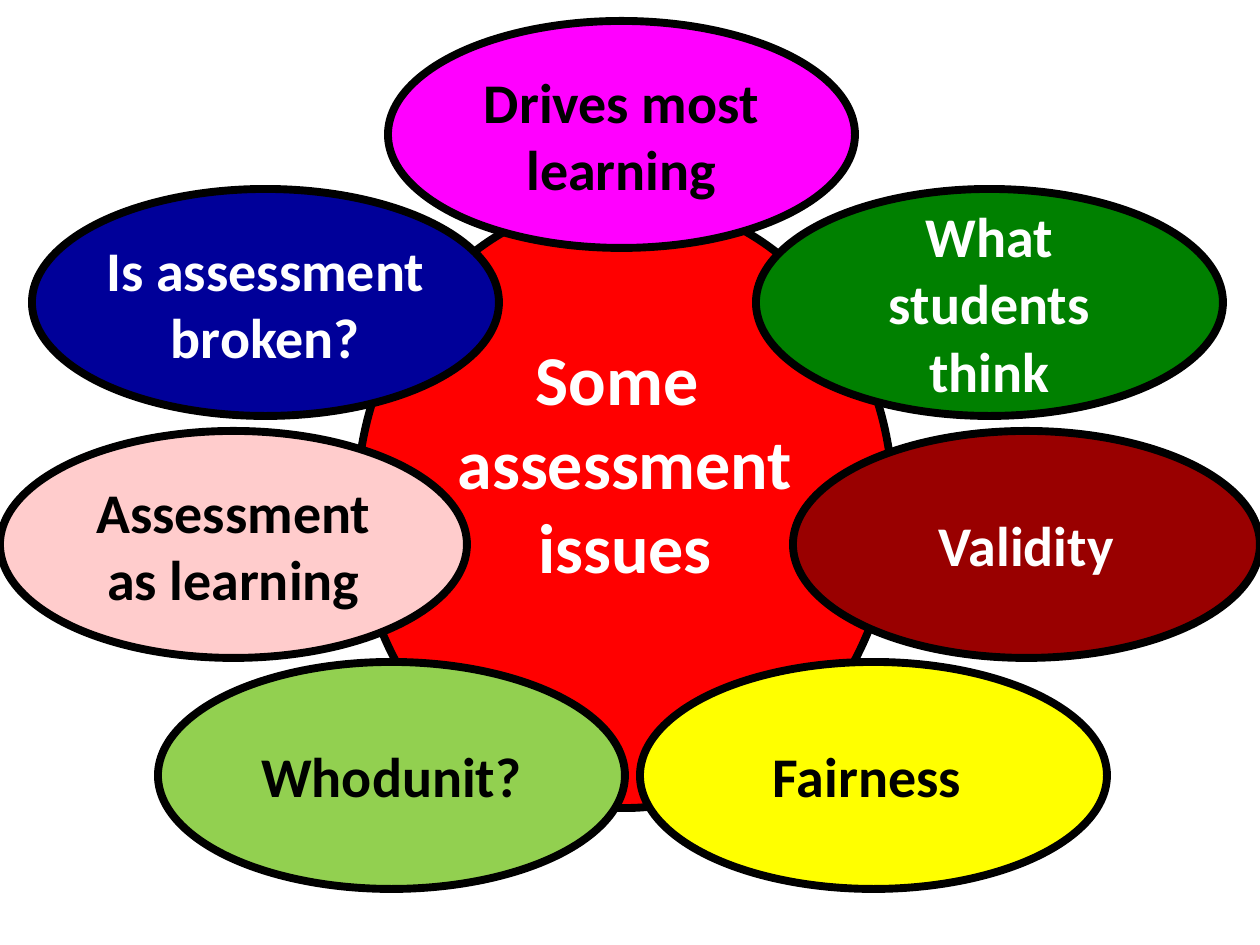
"""Build a slide of seven assessment issues set around a central ellipse."""
from pptx import Presentation
from pptx import util as u
from pptx.dml.color import RGBColor
from pptx.enum import shapes, text

PX = 914400 / 126
HUES = {
    "red": "FF0000", "maroon": "990000", "navy": "000099", "green": "008000",
    "pink": "FFCCCC", "magenta": "FF00FF", "lime": "92D050",
    "yellow": "FFFF00", "white": "FFFFFF", "black": "000000",
}


def px(n):
    return u.Emu(round(n * PX))


def oval(words, box, fill, ink, size=32, side=0, base=0):
    shape = slide.shapes.add_shape(shapes.MSO_SHAPE.OVAL, *map(px, box))
    shape.shadow.inherit = False
    shape.fill.solid()
    shape.fill.fore_color.rgb = RGBColor.from_string(HUES[fill])
    shape.line.color.rgb = RGBColor.from_string(HUES["black"])
    shape.line.width = u.Pt(4.5)
    frame = shape.text_frame
    frame.word_wrap = True
    frame.vertical_anchor = text.MSO_ANCHOR.MIDDLE
    frame.margin_left = frame.margin_right = px(side)
    frame.margin_top, frame.margin_bottom = 0, px(base)
    frame.text = words
    for para in frame.paragraphs:
        para.alignment = text.PP_ALIGN.CENTER
        font = para.runs[0].font
        font.name, font.size, font.bold = "Calibri", u.Pt(size), True
        font.color.rgb = RGBColor.from_string(HUES[ink])


deck = Presentation()
deck.slide_width, deck.slide_height = px(1260), px(945)
slide = deck.slides.add_slide(deck.slide_layouts[6])

oval("Some \nassessment\nissues", (357, 199, 536, 609), "red", "white",
     size=40, side=12, base=84)

WIDE, HIGH = 467, 227
issues = [
    ("Validity", 793, 431, "maroon", "white"),
    ("Is assessment broken?", 32, 189, "navy", "white"),
    ("What students think", 756, 189, "green", "white"),
    ("Assessment as learning", 0, 431, "pink", "black"),
    ("Drives most learning", 388, 21, "magenta", "black"),
    ("Whodunit?", 158, 662, "lime", "black"),
    ("Fairness ", 640, 662, "yellow", "black"),
]
for words, left, top, fill, ink in issues:
    oval(words, (left, top, WIDE, HIGH), fill, ink)

deck.save("out.pptx")
